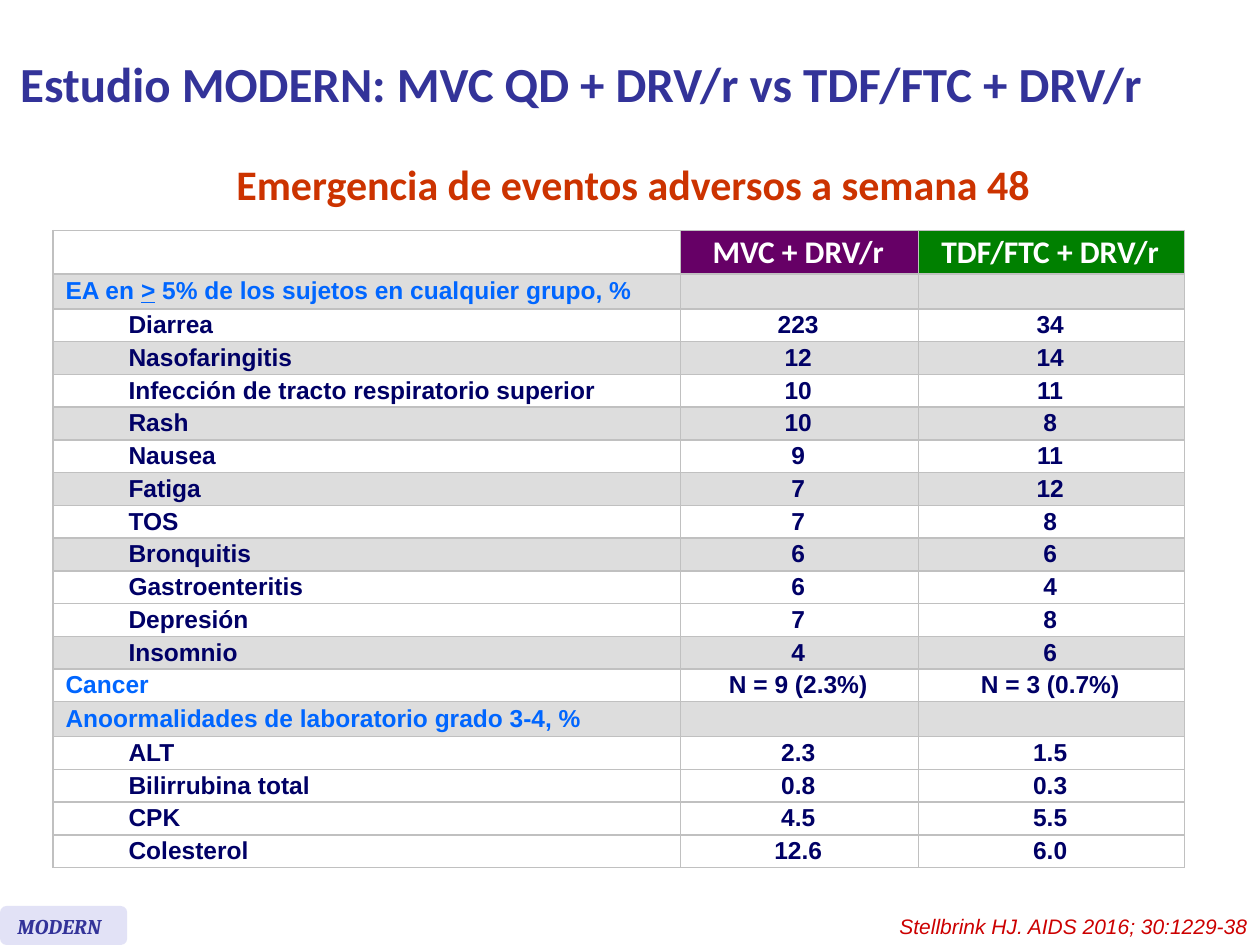
from lxml import etree
from pptx import Presentation, util as u
from pptx.dml.color import RGBColor
from pptx.enum import shapes, text
from pptx.oxml import ns

INDIGO = RGBColor(0x33, 0x33, 0x99)
RUST = RGBColor(0xCC, 0x33, 0x00)
RED = RGBColor(0xCC, 0x00, 0x00)
NAVY = RGBColor(0x00, 0x00, 0x66)
BLUE = RGBColor(0x00, 0x66, 0xFF)
PURPLE = RGBColor(0x66, 0x00, 0x66)
GREEN = RGBColor(0x00, 0x80, 0x00)
WHITE = RGBColor(0xFF, 0xFF, 0xFF)
GREY = RGBColor(0xDD, 0xDD, 0xDD)
LAVENDER = RGBColor(0xE2, 0xE2, 0xF6)
BORDER = "C0C0C0"

HEADERS = [("", None), ("MVC + DRV/r", PURPLE), ("TDF/FTC + DRV/r", GREEN)]
SECTIONS = {"EA en > 5% de los sujetos en cualquier grupo, %", "Cancer",
            "Anoormalidades de laboratorio grado 3-4, %"}
SHADED = {1, 3, 5, 7, 9, 12, 14}
EVENTS = [
    ("EA en > 5% de los sujetos en cualquier grupo, %", "", ""),
    ("Diarrea", "223", "34"),
    ("Nasofaringitis", "12", "14"),
    ("Infección de tracto respiratorio superior", "10", "11"),
    ("Rash", "10", "8"),
    ("Nausea", "9", "11"),
    ("Fatiga", "7", "12"),
    ("TOS", "7", "8"),
    ("Bronquitis", "6", "6"),
    ("Gastroenteritis", "6", "4"),
    ("Depresión", "7", "8"),
    ("Insomnio", "4", "6"),
    ("Cancer", "N = 9 (2.3%)", "N = 3 (0.7%)"),
    ("Anoormalidades de laboratorio grado 3-4, %", "", ""),
    ("ALT", "2.3", "1.5"),
    ("Bilirrubina total", "0.8", "0.3"),
    ("CPK", "4.5", "5.5"),
    ("Colesterol", "12.6", "6.0"),
]


class StudySlide:
    """Holds the slide and the style of its title, texts, tag and table."""

    def __init__(self, deck):
        self.page = deck.slides.add_slide(deck.slide_layouts[5])

    def style(self, para, font, size, color, bold=False, italic=False, align=text.PP_ALIGN.LEFT):
        para.alignment = align
        for span in para.runs:
            span.font.name, span.font.size = font, u.Pt(size)
            span.font.bold, span.font.italic = bold, italic
            span.font.color.rgb = color

    def title(self, words, left, top, width, height):
        box = self.page.shapes.title
        box.left, box.top = u.Inches(left), u.Inches(top)
        box.width, box.height = u.Inches(width), u.Inches(height)
        box.text_frame.text = words
        box.text_frame.vertical_anchor = text.MSO_ANCHOR.MIDDLE
        self.style(box.text_frame.paragraphs[0], "Calibri", 28, INDIGO, bold=True)

    def label(self, words, place, *look, parent=None, **options):
        owner = parent or self.page
        box = owner.shapes.add_textbox(*map(u.Inches, place))
        box.text_frame.word_wrap = True
        box.text_frame.text = words
        para = box.text_frame.paragraphs[0]
        self.style(para, *look, **options)
        return para

    def tag(self, words):
        group = self.page.shapes.add_group_shape()
        badge = group.shapes.add_shape(shapes.MSO_SHAPE.ROUNDED_RECTANGLE,
                                       *map(u.Inches, (0, 7.19, 1.01, 0.31)))
        badge.shadow.inherit = False
        badge.fill.solid()
        badge.fill.fore_color.rgb = LAVENDER
        badge.line.fill.background()
        self.label(words, (0.04, 7.2, 0.94, 0.3), "Cambria", 12, INDIGO,
                   parent=group, bold=True, italic=True)

    def cell(self, cell, words, fill, font, size, color, align):
        cell.text_frame.text = words
        cell.vertical_anchor = text.MSO_ANCHOR.MIDDLE
        cell.margin_left, cell.margin_right = u.Inches(0.1), u.Inches(0.12)
        cell.margin_top = cell.margin_bottom = u.Inches(0.02)
        para = cell.text_frame.paragraphs[0]
        self.style(para, font, size, color, bold=True, align=align)
        if not words:
            etree.SubElement(para._p, ns.qn("a:endParaRPr"), sz=str(size * 100))
        props = cell._tc.get_or_add_tcPr()
        for side in ("lnL", "lnR", "lnT", "lnB"):
            line = etree.SubElement(props, ns.qn(f"a:{side}"), w="12700")
            paint = etree.SubElement(line, ns.qn("a:solidFill"))
            etree.SubElement(paint, ns.qn("a:srgbClr"), val=BORDER)
        if fill is None:
            cell.fill.background()
        else:
            cell.fill.solid()
            cell.fill.fore_color.rgb = fill
        return para

    def underline_sign(self, para, sign):
        before, after = para.text.split(sign)
        para.text = ""
        for part in (before, sign, after):
            span = para.add_run()
            span.text = part
            span.font.underline = part == sign
        self.style(para, "Arial", 14, BLUE, bold=True)

    def table(self, left, top, widths, head_height, row_height):
        height = head_height + row_height * len(EVENTS)
        frame = self.page.shapes.add_table(len(EVENTS) + 1, len(widths), u.Inches(left),
                                           u.Inches(top), u.Inches(sum(widths)), u.Inches(height))
        table = frame.table
        table.first_row = table.horz_banding = False
        for column, width in zip(table.columns, widths):
            column.width = u.Inches(width)
        for index, row in enumerate(table.rows):
            row.height = u.Inches(row_height if index else head_height)
        center = text.PP_ALIGN.CENTER
        for column, (words, fill) in enumerate(HEADERS):
            self.cell(table.cell(0, column), words, fill, "Calibri", 18, WHITE, center)
        for row, (name, *values) in enumerate(EVENTS, 1):
            fill = GREY if row in SHADED else WHITE
            section = name in SECTIONS
            para = self.cell(table.cell(row, 0), name, fill, "Arial", 14,
                             BLUE if section else NAVY, text.PP_ALIGN.LEFT)
            if not section:
                para.level = 1
                props = para._p.get_or_add_pPr()
                props.set("marL", str(u.Inches(0.5)))
                props.set("indent", "0")
            if ">" in name:
                self.underline_sign(para, ">")
            for column, value in enumerate(values, 1):
                self.cell(table.cell(row, column), value, fill, "Arial", 14, NAVY, center)


def main():
    deck = Presentation()
    deck.slide_width, deck.slide_height = u.Inches(10), u.Inches(7.5)
    slide = StudySlide(deck)
    slide.table(0.42, 1.83, (4.98, 1.89, 2.11), 0.32, 0.26)
    heading = slide.label("Emergencia de eventos adversos a semana 48", (0.09, 1.29, 9.87, 0.51),
                          "Calibri", 24, RUST, bold=True, align=text.PP_ALIGN.CENTER)
    heading.line_spacing = u.Pt(22.8)
    slide.title("Estudio MODERN: MVC QD + DRV/r vs TDF/FTC + DRV/r", 0.06, 0.05, 9.91, 1.21)
    slide.tag("MODERN")
    slide.label("Stellbrink HJ. AIDS 2016; 30:1229-38", (6.62, 7.2, 3.38, 0.3),
                "Arial", 12, RED, italic=True, align=text.PP_ALIGN.RIGHT)
    deck.save("out.pptx")


if __name__ == "__main__":
    main()
